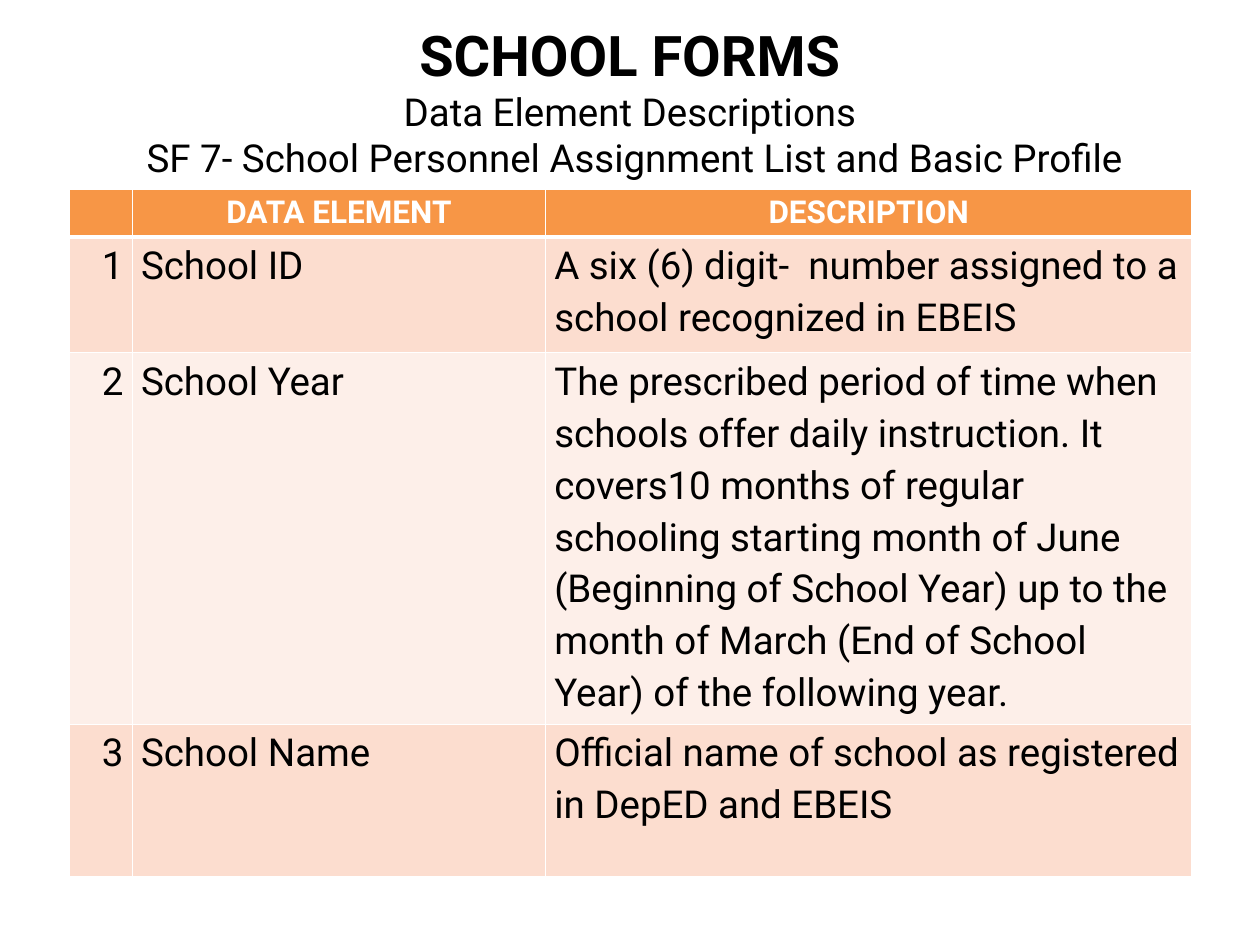
"""Build the School Forms slide describing the SF 7 data elements."""
from lxml import etree
from pptx import Presentation
from pptx.dml.color import RGBColor
from pptx.enum.text import MSO_ANCHOR, PP_ALIGN
from pptx.oxml.ns import qn
from pptx.util import Inches, Pt

LEFT, CENTER, RIGHT = PP_ALIGN.LEFT, PP_ALIGN.CENTER, PP_ALIGN.RIGHT
MIDDLE = MSO_ANCHOR.MIDDLE
BLACK = RGBColor(0x00, 0x00, 0x00)
WHITE = RGBColor(0xFF, 0xFF, 0xFF)
ORANGE = RGBColor(0xF7, 0x96, 0x46)
BANDS = (RGBColor(0xFC, 0xDD, 0xCF), RGBColor(0xFD, 0xEF, 0xE9))

HEADER = ("", "DATA ELEMENT", "DESCRIPTION")
ELEMENTS = (
    ("1", "School ID",
     "A six (6) digit-  number assigned to a school recognized in EBEIS"),
    ("2", "School Year",
     "The prescribed period of time when schools offer daily instruction. "
     "It covers10 months of regular schooling starting month of June "
     "(Beginning of School Year) up to the month of March "
     "(End of School Year) of the following year."),
    ("3", "School Name",
     "Official name of school as registered in DepED and EBEIS"),
)


class SlideBuilder:
    """Hold the style and the current slide."""

    def __init__(self, prs, font="Roboto"):
        self.s = prs.slides.add_slide(prs.slide_layouts[6])
        self.font = font

    def style(self, font, size, color, bold=False):
        """Format a run or paragraph font."""
        font.name, font.size, font.bold = self.font, Pt(size), bold
        font.color.rgb = color

    def title(self, lines, sizes, x, y, w, h):
        """Add a centred heading whose first line is bold."""
        tf = self.s.shapes.add_textbox(
            Inches(x), Inches(y), Inches(w), Inches(h)).text_frame
        tf.word_wrap = True
        tf.vertical_anchor = MIDDLE
        p = tf.paragraphs[0]
        p.text = "\v".join(lines)
        p.alignment = CENTER
        for i, (r, size) in enumerate(zip(p.runs, sizes)):
            self.style(r.font, size, BLACK, bold=i == 0)

    def border(self, cell, side, width):
        """Draw one white cell edge."""
        ln = etree.SubElement(cell._tc.get_or_add_tcPr(), qn(f"a:ln{side}"),
                              w=str(Pt(width)))
        fill = etree.SubElement(ln, qn("a:solidFill"))
        etree.SubElement(fill, qn("a:srgbClr"), val=str(WHITE))

    def cell(self, cell, text, row, align):
        """Fill and format one table cell."""
        header = row == 0
        cell.margin_left = cell.margin_right = Inches(0.07)
        cell.margin_top = cell.margin_bottom = 0
        widths = {"L": 1, "R": 1, "T": 3 if row == 1 else 1,
                  "B": 3 if header else 1}
        for side, width in widths.items():
            self.border(cell, side, width)
        cell.fill.solid()
        cell.fill.fore_color.rgb = ORANGE if header else BANDS[(row - 1) % 2]
        p = cell.text_frame.paragraphs[0]
        p.text = text
        p.alignment = CENTER if header else align
        p.line_spacing = 1.15
        for r in p.runs:
            self.style(r.font, 18 if header else 22,
                       WHITE if header else BLACK, header)

    def table(self, rows, x, y, widths, heights, aligns):
        """Add a table with a header row and banded body rows."""
        table = self.s.shapes.add_table(
            len(rows), len(widths), Inches(x), Inches(y),
            Inches(sum(widths)), Inches(sum(heights))).table
        for column, width in zip(table.columns, widths):
            column.width = Inches(width)
        for i, (values, height) in enumerate(zip(rows, heights)):
            table.rows[i].height = Inches(height)
            for j, (text, align) in enumerate(zip(values, aligns)):
                self.cell(table.cell(i, j), text, i, align)


def main():
    prs = Presentation()
    prs.slide_width, prs.slide_height = Inches(10), Inches(7.5)
    slide = SlideBuilder(prs)
    slide.title(
        ("SCHOOL FORMS", "Data Element Descriptions",
         " SF 7- School Personnel Assignment List and Basic Profile"),
        (32, 22, 22), 0.5, 0.17, 9, 1.25)
    slide.table((HEADER,) + ELEMENTS, 0.55, 1.5, (0.5, 3.28, 5.13),
                (0.38, 0.92, 2.74, 1.21), (RIGHT, LEFT, LEFT))
    prs.save("out.pptx")


if __name__ == "__main__":
    main()
